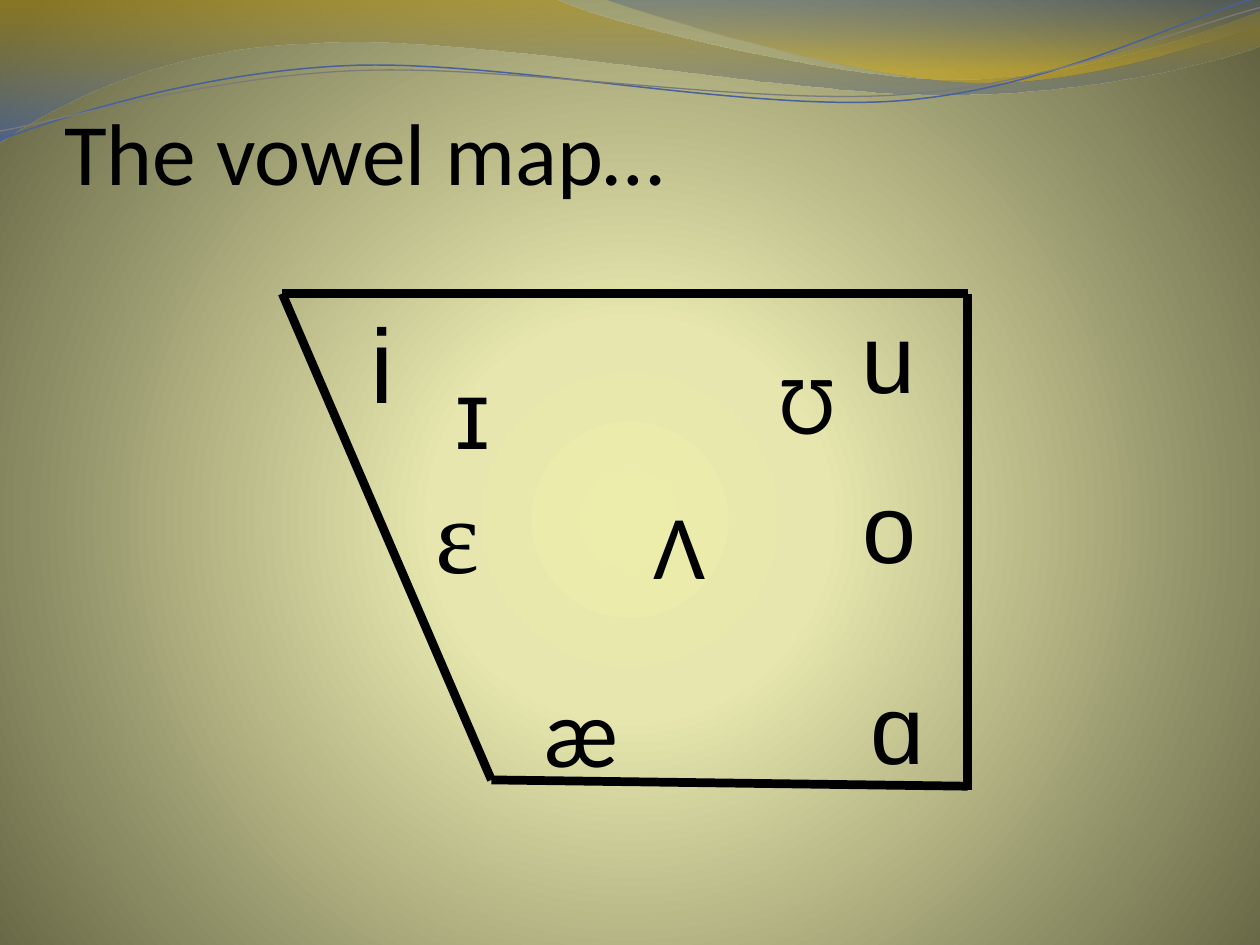
from math import cos, radians, sin

from lxml import etree
from pptx import Presentation
from pptx.dml.color import RGBColor
from pptx.enum.shapes import MSO_CONNECTOR
from pptx.enum.text import MSO_ANCHOR, PP_ALIGN
from pptx.oxml.ns import qn
from pptx.util import Inches, Pt

W, H = 10, 7.5
BLACK = RGBColor(0x00, 0x00, 0x00)
CREAM = RGBColor(0xED, 0xED, 0xAB)
PALE = RGBColor(0xE6, 0xE6, 0xAE)
OLIVE = RGBColor(0x63, 0x63, 0x42)
GOLD = RGBColor(0xB6, 0x90, 0x00)
AMBER = RGBColor(0xD9, 0xAC, 0x00)
BLUE = RGBColor(0x33, 0x59, 0xB7)
NAVY = RGBColor(0x32, 0x4C, 0x8D)
SLATE = RGBColor(0x48, 0x60, 0x9B)
GREY = RGBColor(0x7A, 0x7A, 0x7A)

TITLE = "The vowel map…"
BACKDROP = [(0, CREAM, 100), (25, PALE, 100), (100, OLIVE, 100)]

RIBBONS = [
    ([[(0, 0)], [(4.4, -0.01)],
      [(4.76, 0.17), (6.64, 0.63), (7.58, 0.63)],
      [(8.53, 0.63), (9.58, 0.26), (10, 0.09)], [(10.01, 0.36)],
      [(9.83, 0.44), (8.7, 0.76), (7.46, 0.75)],
      [(6.22, 0.75), (3.82, 0.28), (2.57, 0.34)],
      [(1.29, 0.36), (0.46, 0.83), (-0.01, 1.13)], [(0, 0)]],
     [(0, GOLD, 45), (100, BLUE, 55)]),
    ([[(4.79, -0.01)],
      [(5.09, 0.11), (6.82, 0.62), (7.69, 0.65)],
      [(8.56, 0.69), (9.61, 0.32), (10, 0.21)],
      [(10, 0)], [(4.79, -0.01)]],
     [(0, NAVY, 30), (80, AMBER, 45)]),
]
WAVE_TILT = -2.7
WAVE_CENTER = (4.99, 0.58)
WAVES = [
    ([[(0, 1.11)],
      [(0.48, 0.93), (1.58, 0.57), (2.77, 0.52)],
      [(3.95, 0.47), (5.93, 0.89), (7.13, 0.8)],
      [(8.33, 0.71), (9.38, 0.15), (9.98, -0.02)]], SLATE, 0.85),
    ([[(0, 1.04)],
      [(0.47, 0.96), (1.64, 0.61), (2.83, 0.56)],
      [(4.03, 0.51), (5.97, 0.84), (7.17, 0.75)],
      [(8.36, 0.67), (9.41, 0.21), (10, 0.06)]], GREY, 0.75),
]

TOP_LEFT, TOP_RIGHT, BOTTOM_LEFT = (2.24, 2.33), (7.68, 2.33), (3.9, 6.19)
EDGES = [(TOP_LEFT, BOTTOM_LEFT), (TOP_LEFT, TOP_RIGHT),
         (BOTTOM_LEFT, (7.68, 6.24)), (TOP_RIGHT, (7.68, 6.27))]

VOWELS = [
    ("ɑ", (6.57, 5.25, 1.1, 0.94), "Arial", 55.5, 1),
    ("i", (2.4, 2.43, 1.26, 1.08), "Arial", 60, 0.9),
    ("u", (6.5, 2.41, 1.1, 0.94), "Arial", 55.5, 0.9),
    ("ε", (3.11, 3.67, 1.04, 1), "Times New Roman", 60.1, 1),
    ("o", (6.58, 3.83, 0.96, 0.92), "Arial", 55.5, 0.8),
    ("ɪ", (3.27, 2.75, 0.96, 0.92), "Arial", 55.5, 1),
    ("æ", (4.13, 5.27, 0.96, 0.92), "Calibri", 55.5, 1),
    ("Λ", (4.91, 3.83, 0.96, 0.92), "Calibri", 52, 1),
    ("Ʊ", (5.93, 2.73, 0.96, 0.92), "Calibri", 48, 1),
]


def set_gradient(holder, stops):
    grad = etree.Element(qn("a:gradFill"), rotWithShape="1")
    gs_list = etree.SubElement(grad, qn("a:gsLst"))
    for pos, color, opacity in stops:
        gs = etree.SubElement(gs_list, qn("a:gs"), pos=str(pos * 1000))
        clr = etree.SubElement(gs, qn("a:srgbClr"), val=str(color))
        if opacity < 100:
            etree.SubElement(clr, qn("a:alpha"), val=str(opacity * 1000))
    holder.replace(holder.find(qn("a:noFill")), grad)
    return grad


def untilt(point):
    cx, cy = WAVE_CENTER
    dx, dy = point[0] - cx, point[1] - cy
    a = radians(-WAVE_TILT)
    return cx + dx * cos(a) - dy * sin(a), cy + dx * sin(a) + dy * cos(a)


def add_path(s, steps, close):
    start, *rest = [tuple(map(Inches, pt)) for step in steps for pt in step]
    builder = s.shapes.build_freeform(*start)
    builder.add_line_segments(rest, close=close)
    sp = builder.convert_to_shape()
    sp.shadow.inherit = False
    sp.fill.background()
    lines = iter(sp._element.xpath(".//a:lnTo"))
    for step in steps[1:]:
        segment = [next(lines) for _ in step]
        if len(segment) == 3:
            curve = etree.Element(qn("a:cubicBezTo"))
            segment[0].addprevious(curve)
            for line in segment:
                curve.append(line[0])
                line.getparent().remove(line)
    return sp


def add_text(s, text, box, font, size):
    sp = s.shapes.add_textbox(*map(Inches, box))
    tf = sp.text_frame
    tf.word_wrap = True
    p = tf.paragraphs[0]
    p.text = text
    p.font.name, p.font.size = font, Pt(size)
    p.font.color.rgb = BLACK
    return tf, p


def main():
    prs = Presentation()
    prs.slide_width, prs.slide_height = Inches(W), Inches(H)
    s = prs.slides.add_slide(prs.slide_layouts[6])

    s.background.fill.background()
    bg = set_gradient(s._element.xpath(".//p:bgPr")[0], BACKDROP)
    radial = etree.SubElement(bg, qn("a:path"), path="circle")
    etree.SubElement(radial, qn("a:fillToRect"),
                     l="10000", t="110000", r="10000", b="100000")

    for steps, stops in RIBBONS:
        sp = add_path(s, steps, True)
        sp.line.fill.background()
        grad = set_gradient(sp._element.spPr, stops)
        etree.SubElement(grad, qn("a:lin"), ang="5400000", scaled="1")
    for steps, color, width in WAVES:
        level = [[untilt(pt) for pt in step] for step in steps]
        sp = add_path(s, level, False)
        sp.rotation = WAVE_TILT
        sp.line.color.rgb, sp.line.width = color, Pt(width)

    tf, p = add_text(s, TITLE, (0.51, 0.36, 9, 1.25), "Calibri", 50)
    tf.vertical_anchor = MSO_ANCHOR.BOTTOM
    tf.margin_left = tf.margin_right = tf.margin_bottom = 0

    for start, end in EDGES:
        line = s.shapes.add_connector(MSO_CONNECTOR.STRAIGHT,
                                      *map(Inches, start + end))
        line.line.color.rgb, line.line.width = BLACK, Pt(5)
        etree.SubElement(line._element.spPr, qn("a:effectLst"))

    for vowel, box, font, size, spacing in VOWELS:
        tf, p = add_text(s, vowel, box, font, size)
        p.alignment = PP_ALIGN.CENTER
        p.line_spacing, p.space_before = spacing, Pt(size * 0.2)
        pPr = p._p.get_or_add_pPr()
        pPr.set("marL", str(Inches(0.3)))
        pPr.set("indent", str(Inches(-0.3)))

    prs.save("out.pptx")


if __name__ == "__main__":
    main()
